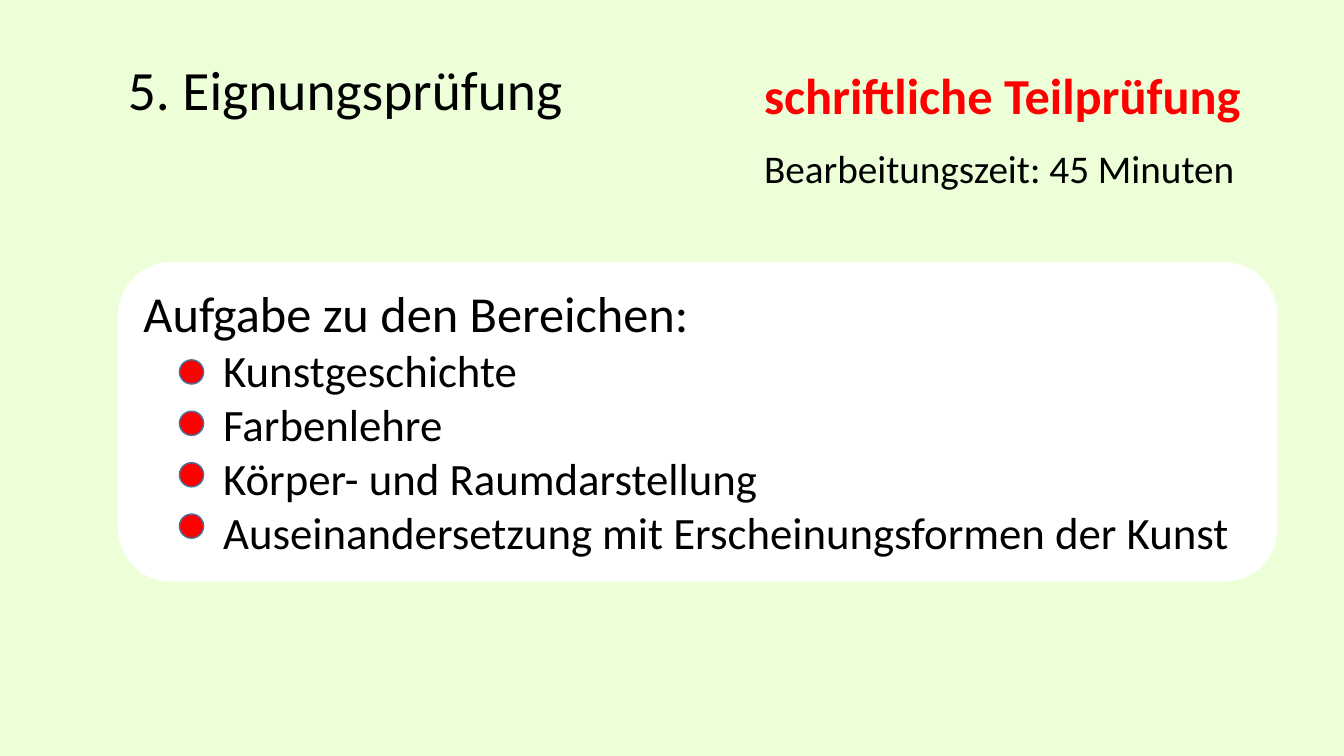
import pptx
import pptx.util
import pptx.dml.color
import pptx.enum.shapes
import pptx.enum.text

COLORS = {
    "background": "ECFFD9",
    "panel": "FFFFFF",
    "text": "000000",
    "accent": "FF0000",
    "dot_edge": "43739E",
}
FONT = "Calibri"
TOPICS = [
    "Kunstgeschichte",
    "Farbenlehre",
    "Körper- und Raumdarstellung",
    "Auseinandersetzung mit Erscheinungsformen der Kunst",
]
LEFT_COLUMN, RIGHT_COLUMN = 1.17, 7.48
TOPIC_INDENT = 0.79
DOT_LEFT, DOT_TOP, DOT_SIZE, DOT_STEP = 1.78, 3.57, 0.24, 0.51

ANCHOR = pptx.enum.text.MSO_ANCHOR
AUTO_SIZE = pptx.enum.text.MSO_AUTO_SIZE
SHAPE = pptx.enum.shapes.MSO_SHAPE


def rgb(color):
    return pptx.dml.color.RGBColor.from_string(COLORS[color])


def inches(*lengths):
    return [pptx.util.Inches(length) for length in lengths]


def apply_format(target, values):
    for attribute, value in values.items():
        setattr(target, attribute, value)


def write(paragraph, words, size, color="text", bold=False):
    paragraph.alignment = pptx.enum.text.PP_ALIGN.LEFT
    run = paragraph.add_run()
    run.text = words
    apply_format(run.font, {"name": FONT, "size": pptx.util.Pt(size), "bold": bold})
    run.font.color.rgb = rgb(color)


def add_heading(slide, box, words, size, frame_format, color="text", bold=False):
    frame = slide.shapes.add_textbox(*inches(*box)).text_frame
    apply_format(frame, frame_format)
    write(frame.paragraphs[0], words, size, color, bold)
    return frame.paragraphs[0]


def add_filled_shape(slide, preset, box, fill, edge=None):
    shape = slide.shapes.add_shape(preset, *inches(*box))
    shape.shadow.inherit = False
    shape.fill.solid()
    shape.fill.fore_color.rgb = rgb(fill)
    if edge:
        shape.line.color.rgb = rgb(edge)
        shape.line.width = pptx.util.Pt(1)
    else:
        shape.line.fill.background()
    return shape


def add_topic_panel(slide):
    panel = add_filled_shape(
        slide, SHAPE.ROUNDED_RECTANGLE, (LEFT_COLUMN, 2.6, 11.5, 3.17), "panel")
    frame = panel.text_frame
    apply_format(frame, {"word_wrap": True, "vertical_anchor": ANCHOR.TOP,
                         "auto_size": AUTO_SIZE.SHAPE_TO_FIT_TEXT})
    write(frame.paragraphs[0], "Aufgabe zu den Bereichen:", 36)
    for topic in TOPICS:
        paragraph = frame.add_paragraph()
        margin = pptx.util.Inches(TOPIC_INDENT)
        paragraph._p.get_or_add_pPr().set("marL", str(margin))
        write(paragraph, topic, 32)


def add_topic_dots(slide):
    for row in range(len(TOPICS)):
        box = (DOT_LEFT, DOT_TOP + row * DOT_STEP, DOT_SIZE, DOT_SIZE)
        add_filled_shape(slide, SHAPE.OVAL, box, "accent", "dot_edge")


def main():
    deck = pptx.Presentation()
    deck.slide_width, deck.slide_height = inches(13.33, 7.5)
    slide = deck.slides.add_slide(deck.slide_layouts[6])
    slide.background.fill.solid()
    slide.background.fill.fore_color.rgb = rgb("background")

    title_format = {"word_wrap": True, "vertical_anchor": ANCHOR.MIDDLE}
    label_format = {"word_wrap": False, "auto_size": AUTO_SIZE.SHAPE_TO_FIT_TEXT}
    title = add_heading(slide, (LEFT_COLUMN, 0.55, 4.62, 0.74),
                        "5. Eignungsprüfung", 39.6, title_format)
    title.line_spacing = 0.9
    add_heading(slide, (RIGHT_COLUMN, 0.59, 5, 0.71),
                "schriftliche Teilprüfung", 36, label_format, "accent", True)
    add_heading(slide, (RIGHT_COLUMN, 1.38, 4.92, 0.57),
                "Bearbeitungszeit: 45 Minuten", 28, label_format)
    add_topic_panel(slide)
    add_topic_dots(slide)
    deck.save("out.pptx")


if __name__ == "__main__":
    main()
